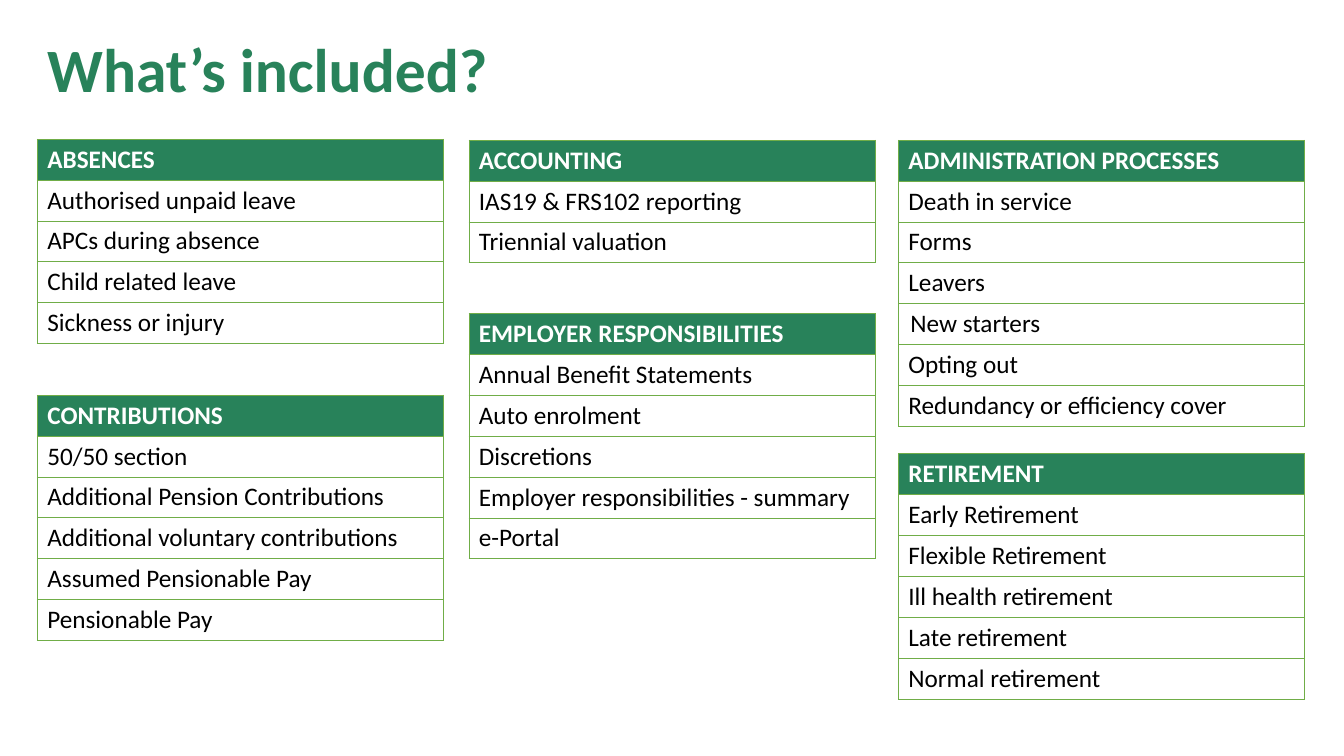
from lxml.etree import SubElement as Sub
from pptx import Presentation
from pptx.dml.color import RGBColor as RGB
from pptx.enum.text import MSO_ANCHOR as Anchor
from pptx.oxml.ns import qn
from pptx.util import Inches, Pt

HUES = {"green": "28825A", "edge": "70AD47", "white": "FFFFFF", "black": "000000"}
FACE = "Calibri"
LEFT, MID, RIGHT = 0.37, 4.65, 8.91
WIDE = 4.03
ROW = Inches(7.3) // 18

TOPICS = [
    (LEFT, 1.38, "ABSENCES", [
        "Authorised unpaid leave", "APCs during absence",
        "Child related leave", "Sickness or injury"]),
    (MID, 1.39, "ACCOUNTING", [
        "IAS19 & FRS102 reporting", "Triennial valuation"]),
    (RIGHT, 1.39, "ADMINISTRATION PROCESSES", [
        "Death in service", "Forms", "Leavers", "New starters",
        "Opting out", "Redundancy or efficiency cover"]),
    (LEFT, 3.92, "CONTRIBUTIONS", [
        "50/50 section", "Additional Pension Contributions",
        "Additional voluntary contributions", "Assumed Pensionable Pay",
        "Pensionable Pay"]),
    (MID, 3.11, "EMPLOYER RESPONSIBILITIES", [
        "Annual Benefit Statements", "Auto enrolment", "Discretions",
        "Employer responsibilities - summary", "e-Portal"]),
    (RIGHT, 4.5, "RETIREMENT", [
        "Early Retirement", "Flexible Retirement", "Ill health retirement",
        "Late retirement", "Normal retirement"]),
]


def style(frame, size, hue, bold):
    for run in frame.paragraphs[0].runs:
        run.font.name = FACE
        run.font.size = Pt(size)
        run.font.bold = bold
        run.font.color.rgb = RGB.from_string(HUES[hue])


def border(cell):
    props = cell._tc.get_or_add_tcPr()
    for side in ("lnL", "lnR", "lnT", "lnB"):
        line = Sub(props, qn(f"a:{side}"), w=str(Pt(0.5)))
        fill = Sub(line, qn("a:solidFill"))
        Sub(fill, qn("a:srgbClr"), val=HUES["edge"])


def add_title(slide, left, top, width, height):
    box = slide.shapes.add_textbox(
        Inches(left), Inches(top), Inches(width), Inches(height))
    frame = box.text_frame
    frame.word_wrap = True
    frame.vertical_anchor = Anchor.MIDDLE
    frame.text = "What’s included?"
    frame.paragraphs[0].line_spacing = 0.9
    style(frame, 44, "green", True)


def add_topic(slide, left, top, width, head, items):
    texts = [head, *items]
    table = slide.shapes.add_table(
        len(texts), 1, Inches(left), Inches(top), Inches(width),
        ROW * len(texts)).table
    table.horz_banding = False
    for row, text in enumerate(texts):
        cell = table.cell(row, 0)
        first = row == 0
        border(cell)
        cell.fill.solid()
        cell.fill.fore_color.rgb = RGB.from_string(
            HUES["green" if first else "white"])
        cell.text_frame.text = text
        style(cell.text_frame, 18, "white" if first else "black", first)
        if text == "New starters":
            cell.margin_left = Inches(0.12)
            cell.vertical_anchor = Anchor.MIDDLE


def main():
    deck = Presentation()
    deck.slide_width, deck.slide_height = Inches(13.33), Inches(7.5)
    slide = deck.slides.add_slide(deck.slide_layouts[6])
    add_title(slide, LEFT, 0.23, 11.5, 0.98)
    for left, top, head, items in TOPICS:
        add_topic(slide, left, top, WIDE, head, items)
    deck.save("out.pptx")


if __name__ == "__main__":
    main()
